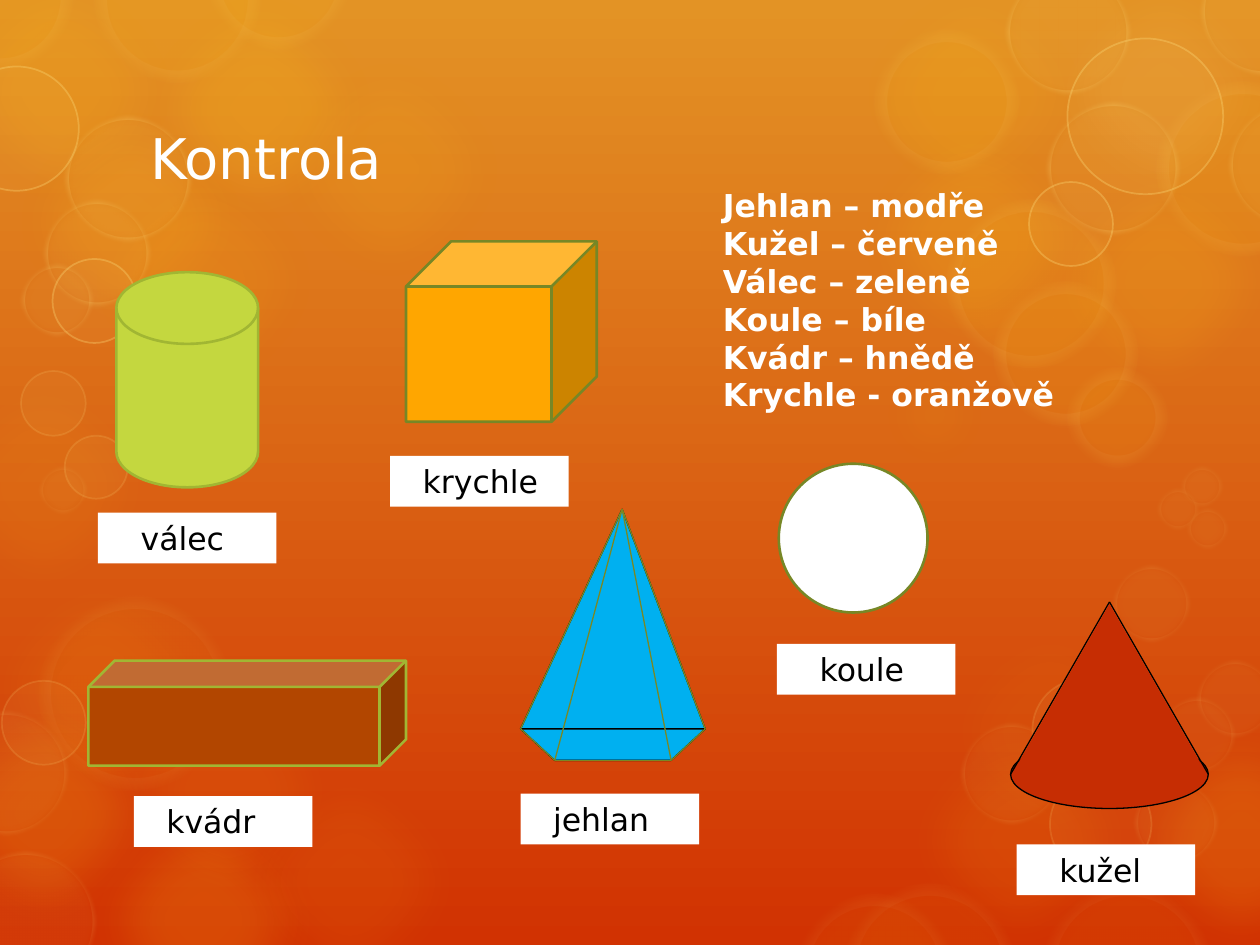
from lxml import etree
from pptx import Presentation
from pptx.dml.color import RGBColor
from pptx.enum.shapes import MSO_CONNECTOR, MSO_SHAPE
from pptx.enum.text import MSO_ANCHOR, PP_ALIGN
from pptx.oxml.ns import qn
from pptx.util import Pt

STRAIGHT = MSO_CONNECTOR.STRAIGHT
OVAL = MSO_SHAPE.OVAL
CUBE = MSO_SHAPE.CUBE
TRIANGLE = MSO_SHAPE.ISOSCELES_TRIANGLE
RECTANGLE = MSO_SHAPE.RECTANGLE
CYLINDER = MSO_SHAPE.FLOWCHART_MAGNETIC_DISK
SPHERE = MSO_SHAPE.FLOWCHART_CONNECTOR
TOP, MIDDLE = MSO_ANCHOR.TOP, MSO_ANCHOR.MIDDLE
LEFT = PP_ALIGN.LEFT

WHITE = RGBColor(0xFF, 0xFF, 0xFF)
BLACK = RGBColor(0x00, 0x00, 0x00)
SKY_TOP = RGBColor(0xE3, 0x93, 0x25)
SKY_BOTTOM = RGBColor(0xD1, 0x32, 0x02)
GLOW = RGBColor(0xFD, 0xC6, 0x1B)
PALE_GLOW = RGBColor(0xFF, 0xE2, 0x81)
CREAM = RGBColor(0xFE, 0xEB, 0xAE)
LIME = RGBColor(0xC4, 0xD7, 0x3F)
DARK_LIME = RGBColor(0xA1, 0xB6, 0x33)
OLIVE = RGBColor(0x77, 0x87, 0x26)
EDGE_OLIVE = RGBColor(0x79, 0x88, 0x26)
ORANGE = RGBColor(0xFF, 0xA6, 0x00)
BROWN = RGBColor(0xB2, 0x46, 0x00)
RED = RGBColor(0xC6, 0x2D, 0x03)
BLUE = RGBColor(0x00, 0xB0, 0xF0)
FONT = "DejaVu Sans"

GLOWS = [
    (-19, 318, 150, 8), (41, 86, 150, 10), (148, 22, 150, 10), (41, 451, 150, 16),
    (-40, -23, 150, 14), (73, -13, 150, 20), (0, 52, 150, 15), (482, -21, 150, 10),
    (590, 86, 150, 15), (634, 405, 150, 16), (525, 343, 150, 5), (-50, 390, 150, 16),
    (55, 377, 150, 8), (482, 62, 150, 15), (508, 405, 150, 10), (125, 429, 150, 8),
    (-50, 203, 150, 8), (486, 189, 96, 10),
]
PALE_GLOWS = [(590, -23, 150, 10)]
BRIGHT_HALOS = [
    (661, 47, 99), (500, 17, 82), (541, 114, 96), (568, 161, 82),
    (610, 210, 57), (54, -47, 94), (118, -54, 82), (-41, -42, 82),
]
FAINT_HALOS = [(22, 341, 110), (455, 511, 90), (482, 505, 98), (596, 505, 96)]
FAINT_RINGS = [(1, 389, 48), (600, 442, 58), (590, 388, 58), (12, 212, 37), (37, 249, 36)]
FAINT_SOFT_RINGS = [
    (-26, 486, 81), (-32, 406, 71), (549, 413, 58), (648, 446, 48), (636, 323, 44),
    (662, 398, 44), (684, 377, 44), (675, 266, 24), (661, 279, 24), (678, 290, 24),
    (22, 266, 28),
]
BRIGHT_RINGS = [(-26, 38, 71), (30, 148, 48), (610, 22, 89), (588, 104, 48)]
BRIGHT_SOFT_RINGS = [
    (37, 66, 72), (25, 114, 61), (12, 151, 41), (575, -17, 71), (686, -29, 72),
    (702, 59, 71), (598, 58, 76),
]
RING_GROUPS = [
    (BRIGHT_HALOS, GLOW, 10, CREAM, 14, 6, 8),
    (FAINT_HALOS, GLOW, 6, CREAM, 14, 4, 8),
    (FAINT_RINGS, PALE_GLOW, 5, PALE_GLOW, 1, 15, 0),
    (FAINT_SOFT_RINGS, PALE_GLOW, 5, PALE_GLOW, 5, 15, 4),
    (BRIGHT_RINGS, PALE_GLOW, 5, PALE_GLOW, 1, 30, 0),
    (BRIGHT_SOFT_RINGS, PALE_GLOW, 5, PALE_GLOW, 5, 30, 4),
]
LABELS = [
    ("jehlan", 297.5, 453.5, 18.6), ("koule", 444, 368, 24.4),
    ("kužel", 581, 482.5, 24.4), ("válec", 56, 293, 24.4),
    ("krychle", 223, 260.5, 18.6), ("kvádr", 76.5, 455, 18.6),
]
COLOUR_TASKS = [
    "Jehlan – modře", "Kužel – červeně", "Válec – zeleně",
    "Koule – bíle", "Kvádr – hnědě", "Krychle - oranžově",
]


def paint(shape, fill, line=None, width=0.75):
    shape.shadow.inherit = False
    shape.fill.solid()
    shape.fill.fore_color.rgb = fill
    if line is None:
        shape.line.fill.background()
    else:
        shape.line.color.rgb = line
        shape.line.width = Pt(width)
    return shape


def add_solid(parent, kind, box, fill, line=None, width=0.75):
    shape = parent.shapes.add_shape(kind, *map(Pt, box))
    return paint(shape, fill, line, width)


def add_edge(parent, start, end, color):
    edge = parent.shapes.add_connector(STRAIGHT, *map(Pt, (*start, *end)))
    edge.line.color.rgb = color
    edge.line.width = Pt(0.75)
    etree.SubElement(edge.element.spPr, qn("a:effectLst"))


def set_opacity(shape, percents):
    for color, percent in zip(shape.element.spPr.iter(qn("a:srgbClr")), percents):
        etree.SubElement(color, qn("a:alpha"), val=str(percent * 1000))


def soften(shape, radius):
    effects = shape.element.spPr.find(qn("a:effectLst"))
    etree.SubElement(effects, qn("a:softEdge"), rad=str(Pt(radius)))


def add_backdrop(page):
    fill = page.background.fill
    fill.gradient()
    fill.gradient_angle = 270
    for stop, color, position in zip(fill.gradient_stops, (SKY_TOP, SKY_BOTTOM), (0, 1)):
        stop.color.rgb = color
        stop.position = position
    for glows, color in ((PALE_GLOWS, PALE_GLOW), (GLOWS, GLOW)):
        for left, top, size, opacity in glows:
            glow = add_solid(page, OVAL, (left, top, size, size), color)
            set_opacity(glow, [opacity])
            soften(glow, 25)
    for rings, color, opacity, line, width, line_opacity, softness in RING_GROUPS:
        for left, top, size in rings:
            ring = add_solid(page, OVAL, (left, top, size, size), color, line, width)
            set_opacity(ring, [opacity, line_opacity])
            if softness:
                soften(ring, softness)


def add_cone(page, box):
    left, top, width, height = box
    base = 39
    apex = (left + width / 2, top)
    rim = top + height - base / 2
    cone = page.shapes.add_group_shape()
    add_solid(cone, OVAL, (left, rim - base / 2, width, base), RED, BLACK)
    for corner in (left, left + width):
        add_edge(cone, (corner, rim), apex, BLACK)
    add_solid(cone, TRIANGLE, (left + 5, top + 1, width - 10, 90), RED)


def add_pyramid(page, box):
    left, top, width, height = box
    apex_share = 0.55
    apex = (left + apex_share * width, top)
    rim, bottom = top + height - 18, top + height
    corners = [(left, rim), (left + 19.5, bottom), (left + 86, bottom), (left + width, rim)]
    pyramid = page.shapes.add_group_shape()
    face = add_solid(pyramid, TRIANGLE, (left, top, width, height - 18), BLUE, BLACK)
    face.adjustments[0] = apex_share
    points = [(Pt(x), Pt(y)) for x, y in corners]
    outline = pyramid.shapes.build_freeform(*points[0])
    outline.add_line_segments(points[1:])
    paint(outline.convert_to_shape(), BLUE, BLACK)
    for corner in corners:
        add_edge(pyramid, corner, apex, EDGE_OLIVE)
    for start, end in zip(corners, corners[1:]):
        add_edge(pyramid, start, end, EDGE_OLIVE)


def write_lines(shape, lines, size, color, bold=False, anchor=TOP, indent=7.2):
    frame = shape.text_frame
    frame.word_wrap = True
    frame.vertical_anchor = anchor
    frame.margin_left = Pt(indent)
    frame.text = "\n".join(lines)
    for para in frame.paragraphs:
        para.alignment = LEFT
        para.font.name = FONT
        para.font.size = Pt(size)
        para.font.bold = bold
        para.font.color.rgb = color


def add_text(page, box, lines, size, bold=False, anchor=TOP):
    text = page.shapes.add_textbox(*map(Pt, box))
    write_lines(text, lines, size, WHITE, bold, anchor)


def add_label(page, box, name, indent):
    label = add_solid(page, RECTANGLE, box, WHITE)
    write_lines(label, [name], 18, BLACK, indent=indent)


def main():
    deck = Presentation()
    deck.slide_width, deck.slide_height = Pt(720), Pt(540)
    page = deck.slides.add_slide(deck.slide_layouts[6])
    add_backdrop(page)
    add_text(page, (79, 53.5, 561, 73), ["Kontrola"], 32, anchor=MIDDLE)
    add_solid(page, CYLINDER, (66.5, 155.5, 81, 123), LIME, DARK_LIME, 1.5)
    add_solid(page, CUBE, (232, 138, 109, 103), ORANGE, OLIVE, 1.5)
    add_solid(page, CUBE, (50.5, 377.5, 181.5, 60), BROWN, DARK_LIME, 1.5)
    add_solid(page, SPHERE, (445, 265, 85, 85), WHITE, OLIVE, 1.5)
    add_cone(page, (577.5, 344, 113, 118))
    add_pyramid(page, (297.5, 291, 105.5, 143.5))
    for name, left, top, indent in LABELS:
        add_label(page, (left, top, 102, 29), name, indent)
    add_text(page, (406, 103, 219, 138), COLOUR_TASKS, 18, bold=True)
    deck.save("out.pptx")


if __name__ == "__main__":
    main()
